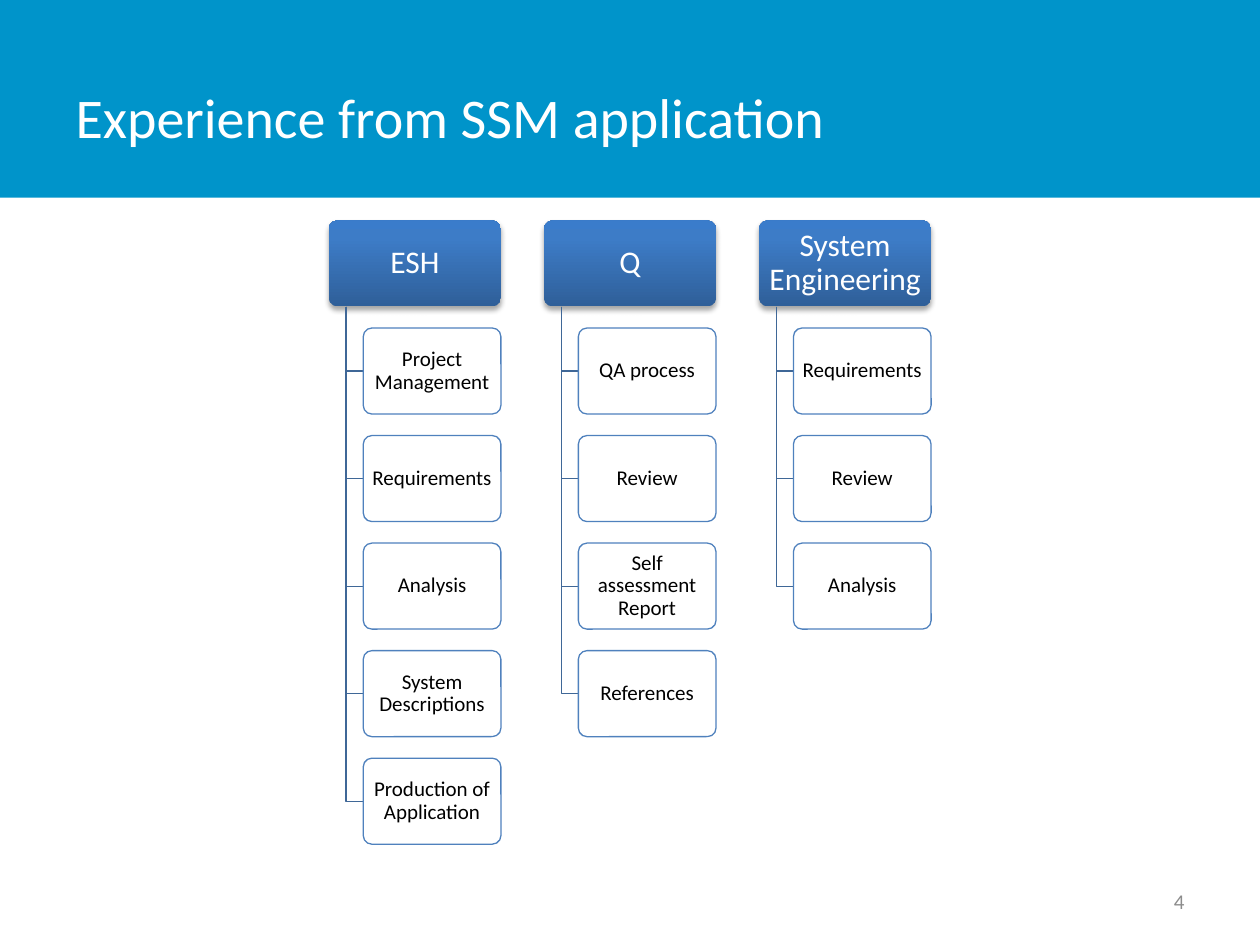
import pptx
import pptx.dml.color
import pptx.enum.shapes
import pptx.enum.text
import pptx.oxml
import pptx.oxml.ns
import pptx.util

Inches, Pt = pptx.util.Inches, pptx.util.Pt
RGBColor = pptx.dml.color.RGBColor
SHAPE = pptx.enum.shapes.MSO_SHAPE
ALIGN = pptx.enum.text.PP_ALIGN

WHITE = RGBColor(0xFF, 0xFF, 0xFF)
BLACK = RGBColor(0x00, 0x00, 0x00)
BAND = RGBColor(0x00, 0x94, 0xCA)
OUTLINE = RGBColor(0x4F, 0x81, 0xBD)
ELBOW = RGBColor(0x3F, 0x67, 0x97)
GREY = RGBColor(0x8C, 0x8C, 0x8C)
STOPS = [
    (0, RGBColor(0x2F, 0x5F, 0x99)),
    (80, RGBColor(0x3D, 0x7C, 0xC7)),
    (100, RGBColor(0x3A, 0x7C, 0xCB)),
]
FONT = "Calibri"
NS = pptx.oxml.ns.nsdecls("a")

COLUMNS = [
    ("ESH", ["Project Management", "Requirements", "Analysis",
             "System Descriptions", "Production of Application"]),
    ("Q", ["QA process", "Review", "Self assessment Report", "References"]),
    ("System Engineering", ["Requirements", "Review", "Analysis"]),
]


def write(sp, text, size, color, align):
    """Put one vertically centred paragraph into a shape."""
    tf = sp.text_frame
    tf.word_wrap = True
    tf.vertical_anchor = pptx.enum.text.MSO_ANCHOR.MIDDLE
    p = tf.paragraphs[0]
    p.text = text
    p.alignment = align
    p.font.name = FONT
    p.font.size = Pt(size)
    p.font.color.rgb = color
    return p


def add_card(s, box, text, size, color, margins):
    """Add a rounded rectangle with centred text."""
    sp = s.shapes.add_shape(SHAPE.ROUNDED_RECTANGLE, *box)
    sp.adjustments[0] = 0.1
    p = write(sp, text, size, color, ALIGN.CENTER)
    p.line_spacing = 0.9
    tf = sp.text_frame
    tf.margin_left = tf.margin_right = Inches(margins[0])
    tf.margin_top = tf.margin_bottom = Inches(margins[1])
    return sp


def add_header(s, box, text):
    """Add a column header with a gradient and a soft shadow."""
    sp = add_card(s, box, text, 18, WHITE, (0.04, 0.03))
    spPr = sp.element.spPr
    stops = "".join(
        f'<a:gs pos="{pos * 1000}"><a:srgbClr val="{color}"/></a:gs>'
        for pos, color in STOPS)
    spPr.append(pptx.oxml.parse_xml(
        f'<a:gradFill {NS} rotWithShape="1"><a:gsLst>{stops}</a:gsLst>'
        '<a:lin ang="16200000" scaled="0"/></a:gradFill>'))
    sp.line.fill.background()
    spPr.append(pptx.oxml.parse_xml(
        f'<a:effectLst {NS}><a:outerShdw blurRad="{Pt(3.1)}" dist="{Pt(1.8)}"'
        ' dir="5400000" rotWithShape="0"><a:srgbClr val="000000">'
        '<a:alpha val="35000"/></a:srgbClr></a:outerShdw></a:effectLst>'))


def add_item(s, box, text):
    """Add an outlined item card."""
    sp = add_card(s, box, text, 12, BLACK, (0.03, 0.02))
    sp.shadow.inherit = False
    sp.fill.solid()
    sp.fill.fore_color.rgb = WHITE
    clr = sp.element.spPr.find(".//" + pptx.oxml.ns.qn("a:srgbClr"))
    clr.append(pptx.oxml.parse_xml(f'<a:alpha {NS} val="90000"/>'))
    sp.line.color.rgb = OUTLINE
    sp.line.width = Pt(0.75)


def add_elbow(s, left, top, right, bottom):
    """Add a line going down and then right to an item."""
    fb = s.shapes.build_freeform(left, top)
    fb.add_line_segments([(left, bottom), (right, bottom)], close=False)
    sp = fb.convert_to_shape()
    sp.shadow.inherit = False
    sp.fill.background()
    sp.line.color.rgb = ELBOW
    sp.line.width = Pt(0.75)


def add_column(s, left, top, width, header, items):
    """Add a header with its items hanging below it."""
    height = width // 2
    indent = width // 5
    add_header(s, (left, top, width, height), header)
    for i, text in enumerate(items, 1):
        y = top + i * height * 5 // 4
        add_elbow(s, left + indent // 2, top + height,
                  left + indent, y + height // 2)
        add_item(s, (left + indent, y, width - indent, height), text)


def add_hierarchy(s, left, top, width):
    """Spread the columns over the width with quarter-column gaps."""
    n = len(COLUMNS)
    col = int(width / (n + (n - 1) / 4))
    for i, (header, items) in enumerate(COLUMNS):
        add_column(s, left + i * col * 5 // 4, top, col, header, items)


def add_title_band(s, left, top, width, height):
    """Add the coloured band and set the title on it."""
    sp = s.shapes.add_shape(SHAPE.RECTANGLE, left, top, width, height)
    sp.shadow.inherit = False
    sp.fill.solid()
    sp.fill.fore_color.rgb = BAND
    sp.line.fill.background()
    title = s.shapes.title
    s.shapes.element.append(title.element)
    title.left, title.top = left + Inches(0.5), top + Inches(0.3)
    title.width, title.height = Inches(7.81), Inches(1.25)
    write(title, "Experience from SSM application", 32, WHITE, ALIGN.LEFT)


def add_page_number(s, left, top, width, height):
    """Add the page number at the right of its box."""
    sp = s.shapes.add_textbox(left, top, width, height)
    write(sp, "4", 12, GREY, ALIGN.RIGHT)


def main():
    """Build and save the slide."""
    prs = pptx.Presentation()
    prs.slide_width, prs.slide_height = Inches(10), Inches(7.5)
    s = prs.slides.add_slide(prs.slide_layouts[5])
    add_title_band(s, 0, 0, prs.slide_width, Inches(1.57))
    add_hierarchy(s, Inches(2.61), Inches(1.75), Inches(4.78))
    add_page_number(s, Inches(7.17), Inches(6.95), Inches(2.33), Inches(0.4))
    prs.save("out.pptx")


if __name__ == "__main__":
    main()
